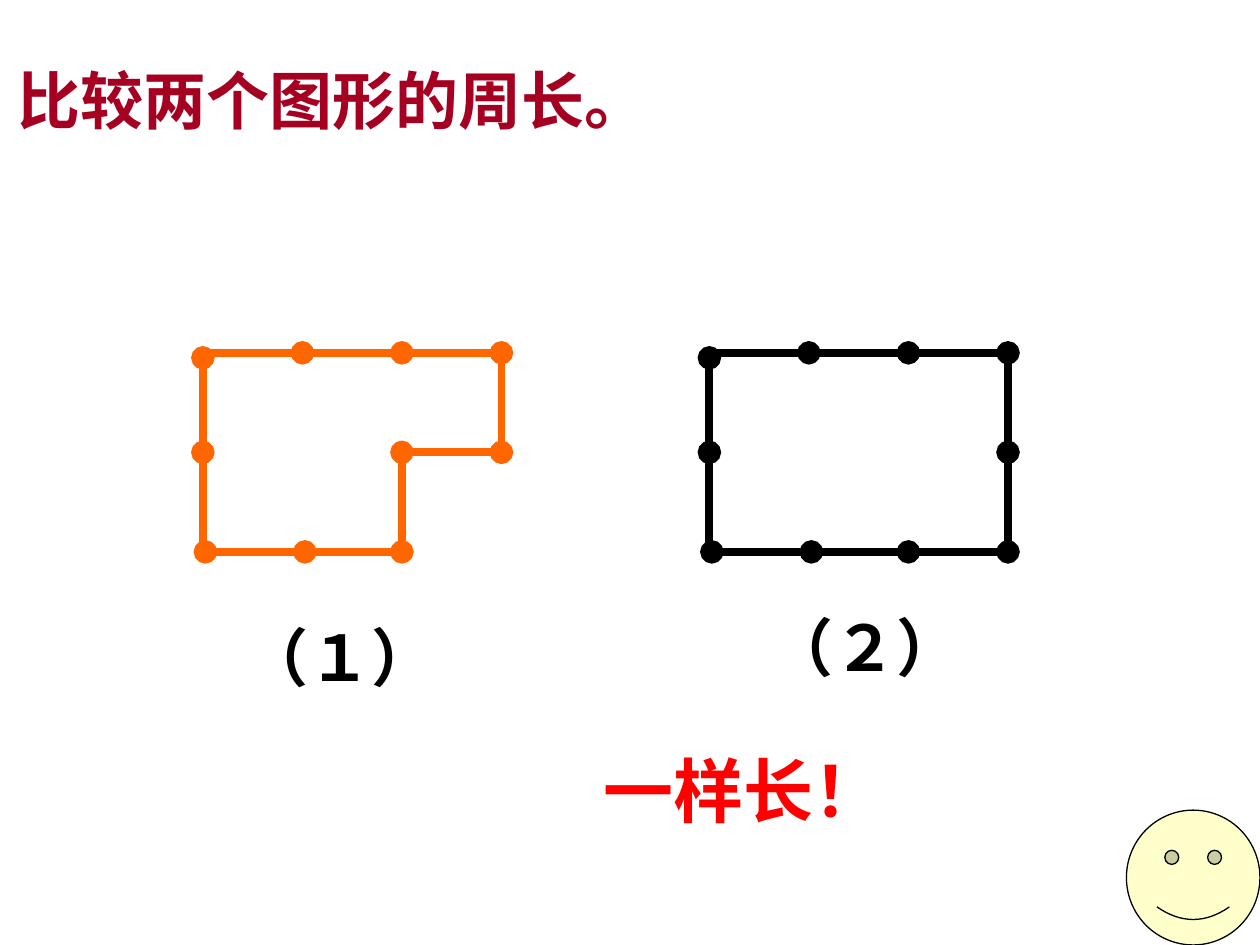
from typing import NamedTuple

from pptx import Presentation
from pptx.dml.color import RGBColor
from pptx.enum.shapes import MSO_AUTO_SHAPE_TYPE as ShapeType, MSO_CONNECTOR as Connector
from pptx.enum.text import MSO_AUTO_SIZE as AutoSize
from pptx.oxml.ns import qn
from pptx.util import Inches, Pt
from lxml.etree import SubElement

COLORS = {
    "title": "A50021",
    "orange": "FF6600",
    "black": "000000",
    "answer": "FF0000",
    "face": "FFFFCC",
}
STEP = 0.79  # length of one stick


class Stick(NamedTuple):
    """A stick from start to end, in stick lengths; nudge moves it in inches."""
    start: tuple[int, int]
    end: tuple[int, int]
    nudge: tuple[float, float] = (0, 0)


class Figure(NamedTuple):
    left: float
    top: float
    color: str
    sticks: list[Stick]


class Label(NamedTuple):
    text: str
    left: float
    top: float
    width: float
    height: float = 0.7
    size: int = 36
    color: str = "black"


SHARED_STICKS = [
    *(Stick((column, 0), (column + 1, 0)) for column in range(3)),
    Stick((0, 1), (0, 0), (0, 0.04)),
    Stick((0, 2), (0, 1)),
    *(Stick((column + 1, 2), (column, 2), (0.02, 0)) for column in range(2)),
    Stick((3, 0), (3, 1)),
]
FIGURES = [
    Figure(5.63, 2.8, "black", SHARED_STICKS + [
        Stick((3, 2), (2, 2)),
        Stick((3, 1), (3, 2)),
    ]),
    Figure(1.61, 2.8, "orange", SHARED_STICKS + [
        Stick((3, 1), (2, 1)),
        Stick((2, 1), (2, 2)),
    ]),
]
LABELS = [
    Label("比较两个图形的周长。", 0.04, 0.44, 5.2, color="title"),
    Label("（１）", 1.85, 4.86, 1.7),
    Label("（２）", 6.02, 4.78, 1.7),
    Label("一样长！", 4.69, 5.88, 2.42, height=0.77, size=40, color="answer"),
]


def rgb(name: str) -> RGBColor:
    return RGBColor.from_string(COLORS[name])


def draw_stick(slide, figure: Figure, stick: Stick) -> None:
    def position(point: tuple[int, int]) -> tuple[int, int]:
        return (Inches(figure.left + point[0] * STEP + stick.nudge[0]),
                Inches(figure.top + point[1] * STEP + stick.nudge[1]))

    connector = slide.shapes.add_connector(
        Connector.STRAIGHT, *position(stick.start), *position(stick.end))
    connector.line.color.rgb = rgb(figure.color)
    connector.line.width = Pt(4.5)
    SubElement(connector.line._get_or_add_ln(), qn("a:tailEnd"), type="oval")
    SubElement(connector._element.spPr, qn("a:effectLst"))


def add_label(slide, text: str, *, left: float, top: float, width: float,
              height: float, size: int, color: str) -> None:
    box = slide.shapes.add_textbox(
        Inches(left), Inches(top), Inches(width), Inches(height))
    frame = box.text_frame
    frame.word_wrap = False
    frame.auto_size = AutoSize.SHAPE_TO_FIT_TEXT
    run = frame.paragraphs[0].add_run()
    run.text = text
    run.font.name = "Arial"
    run.font.size = Pt(size)
    run.font.bold = True
    run.font.color.rgb = rgb(color)


def draw_smiley(slide) -> None:
    smiley = slide.shapes.add_shape(
        ShapeType.SMILEY_FACE, Inches(8.94), Inches(6.43), Inches(1.06), Inches(1.07))
    smiley.adjustments[0] = 0.047
    smiley.shadow.inherit = False
    smiley.fill.solid()
    smiley.fill.fore_color.rgb = rgb("face")
    smiley.line.color.rgb = rgb("black")
    smiley.line.width = Pt(0.75)


def main() -> None:
    presentation = Presentation()
    presentation.slide_width = Inches(10)
    presentation.slide_height = Inches(7.5)
    slide = presentation.slides.add_slide(presentation.slide_layouts[6])
    for figure in FIGURES:
        for stick in figure.sticks:
            draw_stick(slide, figure, stick)
    for label in LABELS:
        add_label(slide, **label._asdict())
    draw_smiley(slide)
    presentation.save("out.pptx")


if __name__ == "__main__":
    main()
